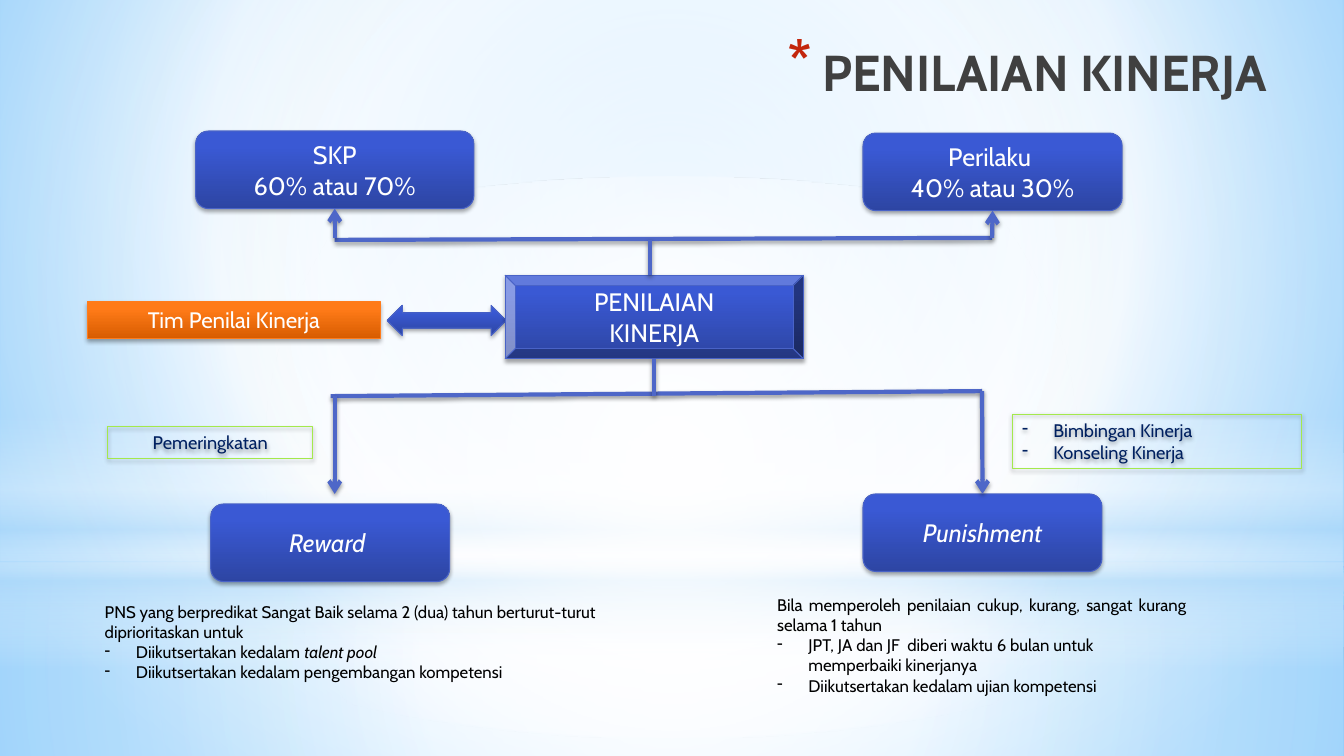
from dataclasses import dataclass
from typing import Optional

from lxml.etree import SubElement
from pptx import Presentation
from pptx.dml.color import RGBColor
from pptx.enum.shapes import MSO_CONNECTOR, MSO_SHAPE
from pptx.enum.text import MSO_ANCHOR, MSO_AUTO_SIZE, PP_ALIGN
from pptx.oxml.ns import qn
from pptx.util import Inches, Pt


@dataclass(frozen=True)
class Theme:
    font: str = "Cabin"
    head: int = 36
    node: int = 18
    team: int = 16
    label: int = 13
    note: int = 12
    white: str = "FFFFFF"
    black: str = "000000"
    title: str = "404040"
    star: str = "C3260C"
    navy: str = "002060"
    edge: str = "4963C7"
    link: str = "4E67C8"
    green: str = "A4E94C"
    amber: str = "FF7C1B"
    blues: tuple = ((0, "2D45A3"), (80, "3A59D4"), (100, "3758D7"))
    flames: tuple = ((0, "D75C00"), (80, "FF7B18"), (100, "FF7C19"))
    sky: tuple = ((0, "9ED5FF"), (60, "FFFFFF"), (100, "5BB9FF"))
    floor: tuple = ((0, "FFFFFF", 91), (37, "FFFFFF", 76), (100, "B4DCFA", 79))
    dome: tuple = ((0, "FFFFFF", 89), (48, "FFFFFF", 62), (100, "B4DCFA", 79))
    haze: tuple = ((0, "FFFFFF", 0), (29, "FFFFFF", 30), (45, "B4DCFA", 40),
                   (55, "FFFFFF", 26), (65, "B4DCFA", 60), (100, "FFFFFF", 0))
    glow: tuple = ((0, "FFFFFF"), (56, "FFFFFF", 0))


T = Theme()
MID = (50, 50, 50, 50)
LEFT, CENTER, FULL = PP_ALIGN.LEFT, PP_ALIGN.CENTER, PP_ALIGN.JUSTIFY
RECT, ROUND = MSO_SHAPE.RECTANGLE, MSO_SHAPE.FLOWCHART_ALTERNATE_PROCESS


@dataclass
class Para:
    text: str
    align: PP_ALIGN = CENTER
    dash: bool = False
    slant: bool = False
    tail: str = ""  # closing words in italics


@dataclass
class Box:
    at: tuple
    paras: tuple = ()
    kind: MSO_SHAPE = ROUND
    fill: Optional[tuple] = T.blues
    edge: str = T.edge
    size: int = T.node
    ink: str = T.white
    grow: bool = False


@dataclass
class Link:
    start: tuple
    end: tuple
    arrow: bool = False
    source: str = ""  # box whose bottom the line leaves
    target: str = ""  # box the line reaches
    side: int = 2


def node(parent, tag: str, **attrs):
    return SubElement(parent, qn(tag), {k: str(v) for k, v in attrs.items()})


def tint(parent, color: str, alpha: float = 100) -> None:
    item = node(parent, "a:srgbClr", val=color)
    if alpha < 100:
        node(item, "a:alpha", val=alpha * 1000)


def blend(holder, stops: tuple, angle: int = 270, focus: Optional[tuple] = None) -> None:
    """Turn the solid fill of the holder into a gradient."""
    solid = holder.find(qn("a:solidFill"))
    grad = node(holder, "a:gradFill", rotWithShape=1)
    holder.replace(solid, grad)
    row = node(grad, "a:gsLst")
    for pos, *color in stops:
        tint(node(row, "a:gs", pos=pos * 1000), *color)
    if focus:
        rect = {k: v * 1000 for k, v in zip("ltrb", focus)}
        node(node(grad, "a:path", path="circle"), "a:fillToRect", **rect)
    else:
        node(grad, "a:lin", ang=angle * 60000, scaled=0)


def shade(props, alpha: int, dist: float) -> None:
    old = props.find(qn("a:effectLst"))
    group = node(props, "a:effectLst") if old is None else old
    drop = node(group, "a:outerShdw", blurRad=Pt(3.1), dist=Pt(dist),
                dir=5400000, rotWithShape=0)
    tint(drop, T.black, alpha)


def write(frame, paras: tuple, size: int, ink: str) -> None:
    frame.word_wrap = True
    for i, para in enumerate(paras):
        line = frame.paragraphs[0] if i == 0 else frame.add_paragraph()
        line.alignment = para.align
        if para.dash:
            props = line._p.get_or_add_pPr()
            props.set("marL", str(Inches(0.31)))
            props.set("indent", str(Inches(-0.31)))
            node(props, "a:buChar", char="-")
        font = line.font
        font.name, font.size = T.font, Pt(size)
        font.color.rgb = RGBColor.from_string(ink)
        if para.slant:
            font.italic = True
        line.add_run().text = para.text
        if para.tail:
            run = line.add_run()
            run.text, run.font.italic = para.tail, True


def draw(slide, box: Box):
    shape = slide.shapes.add_shape(box.kind, *map(Inches, box.at))
    shape.shadow.inherit = False
    shade(shape.element.spPr, 35, 1.8)
    if box.fill:
        shape.fill.solid()
        blend(shape.element.spPr, box.fill)
    else:
        shape.fill.background()
    shape.line.color.rgb = RGBColor.from_string(box.edge)
    shape.line.width = Pt(0.75)
    write(shape.text_frame, box.paras, box.size, box.ink)
    if box.grow:
        shape.text_frame.vertical_anchor = MSO_ANCHOR.TOP
        shape.text_frame.auto_size = MSO_AUTO_SIZE.SHAPE_TO_FIT_TEXT
    return shape


def join(slide, link: Link, shapes: dict) -> None:
    ends = map(Inches, link.start + link.end)
    wire = slide.shapes.add_connector(MSO_CONNECTOR.STRAIGHT, *ends)
    wire.line.color.rgb = RGBColor.from_string(T.link)
    wire.line.width = Pt(3)
    if link.arrow:
        node(wire.element.spPr.find(qn("a:ln")), "a:tailEnd", type="arrow")
    if link.source:
        wire.begin_connect(shapes[link.source], 2)
    if link.target:
        wire.end_connect(shapes[link.target], link.side)
    shade(wire.element.spPr, 38, 1.6)


BACK = (
    ((0, 5.58, 13.33, 1.92), RECT, T.floor, MID),
    ((0, 0, 13.33, 5.58), RECT, T.dome, MID),
    ((0, 4.12, 13.33, 2.5), RECT, T.haze, None),
    ((0, 1.75, 13.33, 5.58), MSO_SHAPE.OVAL, T.glow, MID),
)
BOXES = {
    "perilaku": Box((8.56, 1.32, 2.57, 0.77), (Para("Perilaku "), Para("40% atau 30%"))),
    "skp": Box((1.94, 1.3, 2.76, 0.77), (Para("SKP"), Para("60% atau 70%"))),
    "reward": Box((2.09, 5, 2.37, 0.77), (Para("Reward ", slant=True),)),
    "punish": Box((8.56, 4.9, 2.37, 0.77), (Para("Punishment", slant=True),)),
    "swap": Box((3.84, 3.03, 1.18, 0.3), kind=MSO_SHAPE.LEFT_RIGHT_ARROW),
    "team": Box((0.87, 2.99, 2.9, 0.37), (Para("Tim Penilai Kinerja"),), RECT,
                T.flames, T.amber, T.team, grow=True),
    "rank": Box((1.07, 4.23, 2.03, 0.32), (Para("Pemeringkatan"),), RECT,
                None, T.green, T.label, T.navy, True),
    "guide": Box((10.04, 4.11, 2.87, 0.54),
                 (Para("Bimbingan Kinerja", FULL, True), Para("Konseling Kinerja", FULL, True)),
                 RECT, None, T.green, T.label, T.navy, True),
    "core": Box((5.01, 2.73, 2.96, 0.83), (Para(" PENILAIAN "), Para("KINERJA")), MSO_SHAPE.BEVEL),
}
NOTES = (
    ((0.94, 5.92, 5.31, 0.91), (
        Para("PNS yang berpredikat Sangat Baik selama 2 (dua) tahun berturut-turut "
             "diprioritaskan untuk", LEFT),
        Para("Diikutsertakan kedalam ", LEFT, True, tail="talent pool"),
        Para("Diikutsertakan kedalam pengembangan kompetensi", LEFT, True))),
    ((7.61, 5.85, 4.26, 1.11), (
        Para("Bila memperoleh penilaian cukup, kurang, sangat kurang selama 1 tahun", FULL),
        Para("JPT, JA dan JF  diberi waktu 6 bulan untuk memperbaiki kinerjanya", LEFT, True),
        Para("Diikutsertakan kedalam ujian kompetensi", LEFT, True))),
)
LINKS = (
    Link((9.74, 3.88), (3.28, 3.93)),
    Link((3.32, 3.93), (3.32, 4.9), True),
    Link((9.74, 3.88), (9.74, 4.9), True, target="punish", side=0),
    Link((6.49, 3.56), (6.49, 3.93), source="core"),
    Link((3.32, 2.38), (9.84, 2.36)),
    Link((3.32, 2.36), (3.32, 2.07), True, target="skp"),
    Link((9.84, 2.36), (9.84, 2.09), True, target="perilaku"),
    Link((6.45, 2.73), (6.45, 2.38)),
)


def main() -> None:
    deck = Presentation()
    deck.slide_width, deck.slide_height = Inches(13.33), Inches(7.5)
    slide = deck.slides.add_slide(deck.slide_layouts[5])

    # Backdrop
    slide.background.fill.solid()
    blend(slide.element.xpath(".//p:bgPr")[0], T.sky, focus=(20, 10, 20, 60))
    for at, kind, stops, focus in BACK:
        shape = slide.shapes.add_shape(kind, *map(Inches, at))
        shape.shadow.inherit = False
        shape.line.fill.background()
        shape.fill.solid()
        blend(shape.element.spPr, stops, 90, focus)

    # Title, in front of the backdrop
    title = slide.shapes.title
    title.element.getparent().append(title.element)
    title.left, title.top, title.width, title.height = map(Inches, (0.67, 0.3, 12, 0.81))
    title.text_frame.auto_size = MSO_AUTO_SIZE.NONE
    props = title.text_frame.paragraphs[0]._p.get_or_add_pPr()
    props.set("marL", str(Inches(0.35)))
    props.set("indent", str(Inches(-0.35)))
    tint(node(props, "a:buClr"), T.star)
    node(props, "a:buSzPct", val=128000)
    node(props, "a:buChar", char="*")
    write(title.text_frame, (Para("PENILAIAN KINERJA", PP_ALIGN.RIGHT),), T.head, T.title)
    title.text_frame.paragraphs[0].font.bold = True

    # Boxes, notes and links
    shapes = {name: draw(slide, box) for name, box in BOXES.items()}
    for at, paras in NOTES:
        frame = slide.shapes.add_textbox(*map(Inches, at)).text_frame
        write(frame, paras, T.note, T.black)
        frame.auto_size = MSO_AUTO_SIZE.SHAPE_TO_FIT_TEXT
    for link in LINKS:
        join(slide, link, shapes)

    deck.save("out.pptx")


if __name__ == "__main__":
    main()
